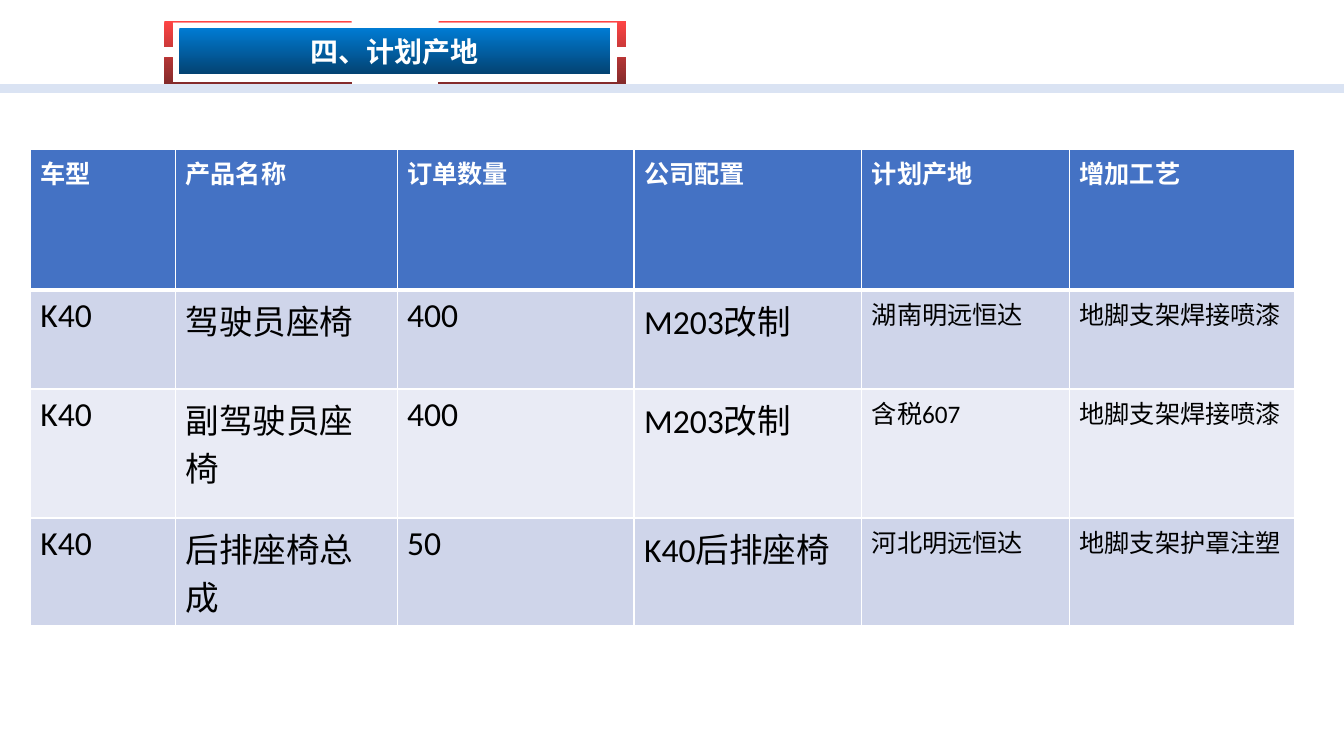
import lxml.etree
import pptx
import pptx.dml.color
import pptx.enum.shapes
import pptx.enum.text
import pptx.oxml.ns
import pptx.util

WIDTH, HEIGHT = pptx.util.Inches(13.33), pptx.util.Inches(7.5)
COLS, ROWS = 160, 90
WHITE, BLACK = "FFFFFF", "000000"
HEAD, BANDS = "4472C4", ("CFD5EA", "E9EBF5")
LATIN, HAN = "Calibri", "Noto Sans CJK SC"

TABLE = [
    ["车型", "产品名称", "订单数量", "公司配置", "计划产地", "增加工艺"],
    ["K40", "驾驶员座椅", "400", "M203改制", "湖南明远恒达", "地脚支架焊接喷漆"],
    ["K40", "副驾驶员座椅", "400", "M203改制", "含税607", "地脚支架焊接喷漆"],
    ["K40", "后排座椅总成", "50", "K40后排座椅", "河北明远恒达", "地脚支架护罩注塑"],
]
SPANS = [17.28, 26.4, 28.2, 27.12, 24.72, 26.76]
DEPTHS = [16.8, 11.76, 15.36, 10.56]


def color(code):
    return pptx.dml.color.RGBColor.from_string(code)


def child(parent, tag, **attrs):
    return lxml.etree.SubElement(parent, pptx.oxml.ns.qn(tag), attrs)


def across(col):
    return round(WIDTH * col / COLS)


def down(row):
    return round(HEIGHT * row / ROWS)


class Page:
    """Holds the slide and draws on it in grid columns and rows."""

    def __init__(self, deck):
        self.slide = deck.slides.add_slide(deck.slide_layouts[5])
        self.shapes = self.slide.shapes

    def label(self, para, text, size, ink, bold=False, latin=LATIN):
        run = para.add_run()
        run.text = text
        font = run.font
        font.size, font.bold, font.name = pptx.util.Pt(size), bold, latin
        font.color.rgb = color(ink)
        child(font._element, "a:ea", typeface=HAN)

    def shade(self, shape, top, bottom):
        """Fill a shape from its top colour down to its bottom colour."""
        shape.fill.gradient()
        shape.fill.gradient_angle = 270
        for stop, code in zip(shape.fill.gradient_stops, (top, bottom)):
            stop.color.rgb = color(code)
        shape.line.fill.background()

    def rule(self, row, weight, code):
        line = self.shapes.add_connector(
            pptx.enum.shapes.MSO_CONNECTOR.STRAIGHT,
            0, down(row), WIDTH, down(row))
        line.line.color.rgb = color(code)
        line.line.width = pptx.util.Pt(weight)
        child(line._element.spPr, "a:effectLst")

    def title(self, text, left, top, width, height):
        box = self.shapes.title
        box.left, box.top = across(left), down(top)
        box.width, box.height = across(width), down(height)
        self.shade(box, "007BD3", "034373")
        frame = box.text_frame
        frame.auto_size = pptx.enum.text.MSO_AUTO_SIZE.NONE
        frame.vertical_anchor = pptx.enum.text.MSO_ANCHOR.MIDDLE
        para = frame.paragraphs[0]
        para.alignment = pptx.enum.text.PP_ALIGN.CENTER
        self.label(para, text, 20, WHITE, True, HAN)

    def frame(self, left, top, width, height, arm, drop, thick, thin):
        """Draw four corner brackets as one outline."""
        bend = [(arm, 0), (0, 0), (0, drop), (thick, drop),
                (thick, thin), (arm, thin)]
        pen = None
        for x, flip in ((left, 1), (left + width, -1)):
            for y, turn in ((top, 1), (top + height, -1)):
                points = [(across(x + flip * dx), down(y + turn * dy))
                          for dx, dy in bend]
                if pen is None:
                    pen = self.shapes.build_freeform(*points[0])
                else:
                    pen.move_to(*points[0])
                pen.add_line_segments(points[1:], close=True)
        shape = pen.convert_to_shape()
        shape.shadow.inherit = False
        self.shade(shape, "FE4444", "832B2B")

    def edge(self, cell, top, bottom):
        """Give a cell white borders; top and bottom are widths in points."""
        props = cell._tc.get_or_add_tcPr()
        for side, weight in zip("LRTB", (1, 1, top, bottom)):
            line = child(props, "a:ln" + side, w=str(pptx.util.Pt(weight)))
            child(child(line, "a:solidFill"), "a:srgbClr", val=WHITE)

    def table(self, data, left, top, spans, depths):
        grid = self.shapes.add_table(
            len(data), len(spans), across(left), down(top),
            across(sum(spans)), down(sum(depths))).table
        for col, span in zip(grid.columns, spans):
            col.width = across(span)
        for row, depth in zip(grid.rows, depths):
            row.height = down(depth)
        for r, texts in enumerate(data):
            head = r == 0
            for c, text in enumerate(texts):
                cell = grid.cell(r, c)
                self.edge(cell, 3 if r == 1 else 1, 3 if head else 1)
                cell.fill.solid()
                cell.fill.fore_color.rgb = color(
                    HEAD if head else BANDS[(r - 1) % 2])
                self.label(cell.text_frame.paragraphs[0], text,
                           18 if head or c > 3 else 24,
                           WHITE if head else BLACK, head)


def main():
    deck = pptx.Presentation()
    deck.slide_width, deck.slide_height = WIDTH, HEIGHT
    page = Page(deck)
    page.rule(10.56, 6, "DAE3F3")
    page.title("四、计划产地", 21.36, 3.36, 51.24, 5.4)
    page.frame(19.56, 2.52, 54.96, 7.44, arm=22.3, drop=3.06, thick=1, thin=0.16)
    page.table(TABLE, 3.6, 17.76, SPANS, DEPTHS)
    deck.save("out.pptx")


if __name__ == "__main__":
    main()
